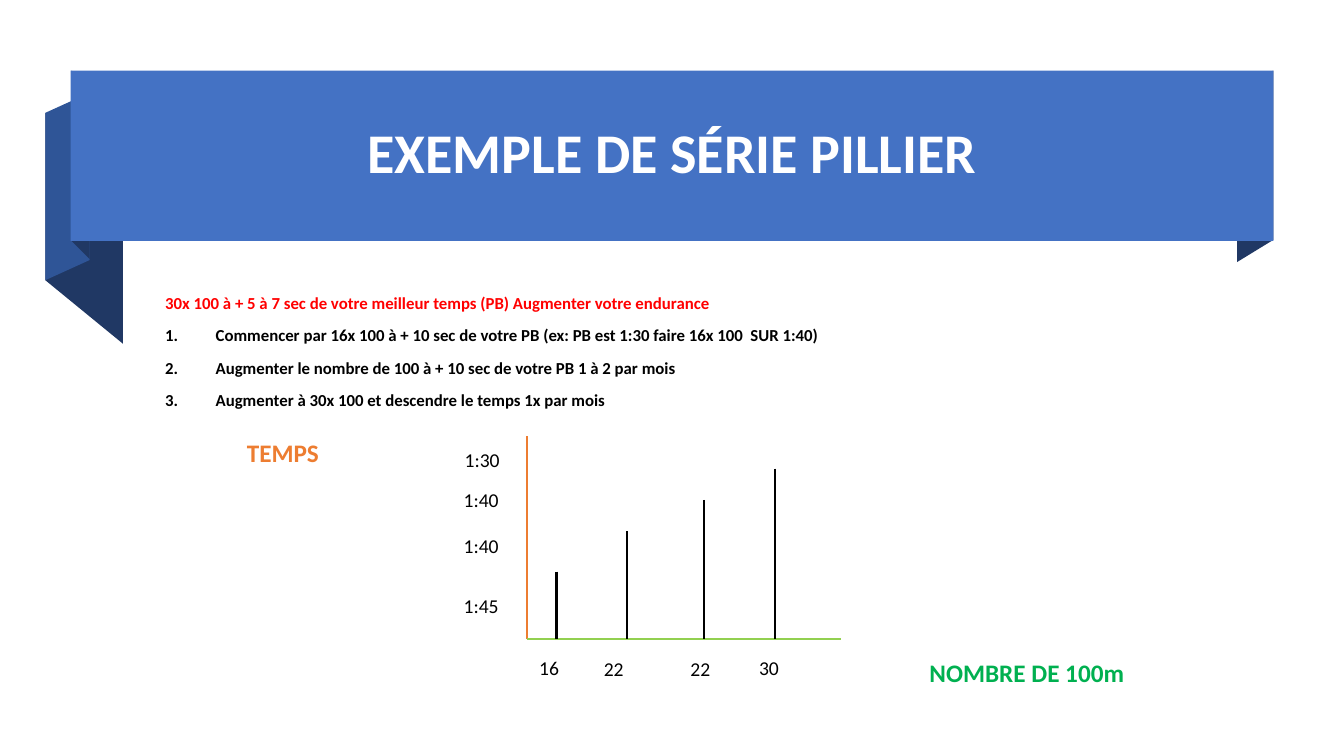
from collections import namedtuple
from lxml.etree import SubElement
from pptx import Presentation
from pptx.dml.color import RGBColor
from pptx.enum.shapes import MSO_CONNECTOR as Connector, MSO_SHAPE as Preset
from pptx.enum.text import MSO_ANCHOR as Anchor, PP_ALIGN as Align
from pptx.oxml.ns import qn
from pptx.util import Inches, Pt

Box = namedtuple("Box", "left top width height")

NAVY, DARK_BLUE, BLUE = "203864", "2F5597", "4472C4"
ORANGE, LIME, GREEN = "ED7D31", "92D050", "00B050"
RED, BLACK, WHITE = "FF0000", "000000", "FFFFFF"

FOLDS = [
    (NAVY, [(0.52, 2.71), (-0.25, 2.08), (-0.25, 0.42), (0.52, 1.05)]),
    (DARK_BLUE, [(0.19, 1.88), (-0.25, 2.08), (-0.25, 0.42), (0.19, 0.22)]),
    (NAVY, [(0.19, 1.87), (0.01, 1.69), (0.01, 0), (0.19, 0.19)]),
    (NAVY, [(11.93, 1.68), (11.57, 1.9), (11.57, 0.21), (11.93, 0)]),
]
GOAL = "30x 100 à + 5 à 7 sec de votre meilleur temps (PB) Augmenter votre endurance"
STEPS = [
    "Commencer par 16x 100 à + 10 sec de votre PB (ex: PB est 1:30 faire 16x 100  SUR 1:40)",
    "Augmenter le nombre de 100 à + 10 sec de votre PB 1 à 2 par mois",
    "Augmenter à 30x 100 et descendre le temps 1x par mois",
]
BARS = [(0.29, 0.67), (0.99, 1.07), (1.75, 1.38), (2.46, 1.69)]
COUNTS = [("16", 0.02, 2.13), ("22", 0.66, 2.14), ("22", 1.52, 2.14), ("30", 2.2, 2.13)]
TIMES = [("1:30", -0.72, 0.06), ("1:40", -0.73, 0.46), ("1:40", -0.73, 0.92), ("1:45", -0.73, 1.51)]


def rgb(value):
    return RGBColor.from_string(value)


def paint(shape, color):
    shape.shadow.inherit = False
    shape.fill.solid()
    shape.fill.fore_color.rgb = rgb(color)
    shape.line.fill.background()


def write(para, text, color, size, bold=False):
    span = para.add_run()
    span.text = text
    span.font.color.rgb = rgb(color)
    for name, value in {"name": "Calibri", "size": Pt(size), "bold": bold}.items():
        setattr(span.font, name, value)


def add_text_frame(page, box):
    frame = page.shapes.add_textbox(*map(Inches, box)).text_frame
    frame.word_wrap = True
    return frame


def add_label(page, box, text, color=BLACK, size=14, bold=False):
    write(add_text_frame(page, box).paragraphs[0], text, color, size, bold)


def add_rule(page, start, end, color):
    rule = page.shapes.add_connector(Connector.STRAIGHT, *map(Inches, start + end))
    rule.line.color.rgb = rgb(color)
    rule.line.width = Pt(1.5)
    SubElement(rule.element.spPr, qn("a:effectLst"))


def add_banner(page, box, title):
    for color, corners in FOLDS:
        points = [(Inches(box.left + x), Inches(box.top + y)) for x, y in corners]
        outline = page.shapes.build_freeform(*points[0])
        outline.add_line_segments(points[1:], close=True)
        paint(outline.convert_to_shape(), color)
    band = page.shapes.add_shape(Preset.RECTANGLE, *map(Inches, box))
    paint(band, BLUE)
    band.text_frame.vertical_anchor = Anchor.MIDDLE
    para = band.text_frame.paragraphs[0]
    para.alignment = Align.CENTER
    para.line_spacing = 0.9
    write(para, title, WHITE, 40, True)


def add_program(page, box):
    frame = add_text_frame(page, box)
    for index, text in enumerate([GOAL] + STEPS):
        para = frame.add_paragraph() if index else frame.paragraphs[0]
        para.line_spacing = 0.9
        if index:
            para.space_before = Pt(10)
            props = para._p.get_or_add_pPr()
            props.set("marL", str(Inches(0.5)))
            props.set("indent", str(-Inches(0.5)))
            SubElement(props, qn("a:buFont"), typeface="+mj-lt")
            SubElement(props, qn("a:buAutoNum"), type="arabicPeriod")
        write(para, text, BLACK if index else RED, 12, True)


def add_progress(page, box):
    left, top, width, height = box
    base = top + height
    add_rule(page, (left, top), (left, base), ORANGE)
    add_rule(page, (left + width, base), (left, base), LIME)
    for x, rise in BARS:
        add_rule(page, (left + x, base - rise), (left + x, base), BLACK)
    for text, x, y in COUNTS + TIMES:
        add_label(page, Box(left + x, top + y, 0.7, 0.34), text)
    add_label(page, Box(left - 2.88, top - 0.04, 1.2, 0.4), "TEMPS", ORANGE, 18, True)
    add_label(page, Box(left + 3.89, top + 2.14, 2.42, 0.4), "NOMBRE DE 100m", GREEN, 18, True)


def main():
    deck = Presentation()
    deck.slide_width, deck.slide_height = Inches(13.33), Inches(7.5)
    page = deck.slides.add_slide(deck.slide_layouts[6])
    add_banner(page, Box(0.7, 0.7, 11.93, 1.69), "EXEMPLE DE SÉRIE PILLIER")
    add_program(page, Box(1.54, 2.88, 10.62, 1.4))
    add_progress(page, Box(5.23, 4.33, 3.11, 2.01))
    deck.save("out.pptx")


if __name__ == "__main__":
    main()
